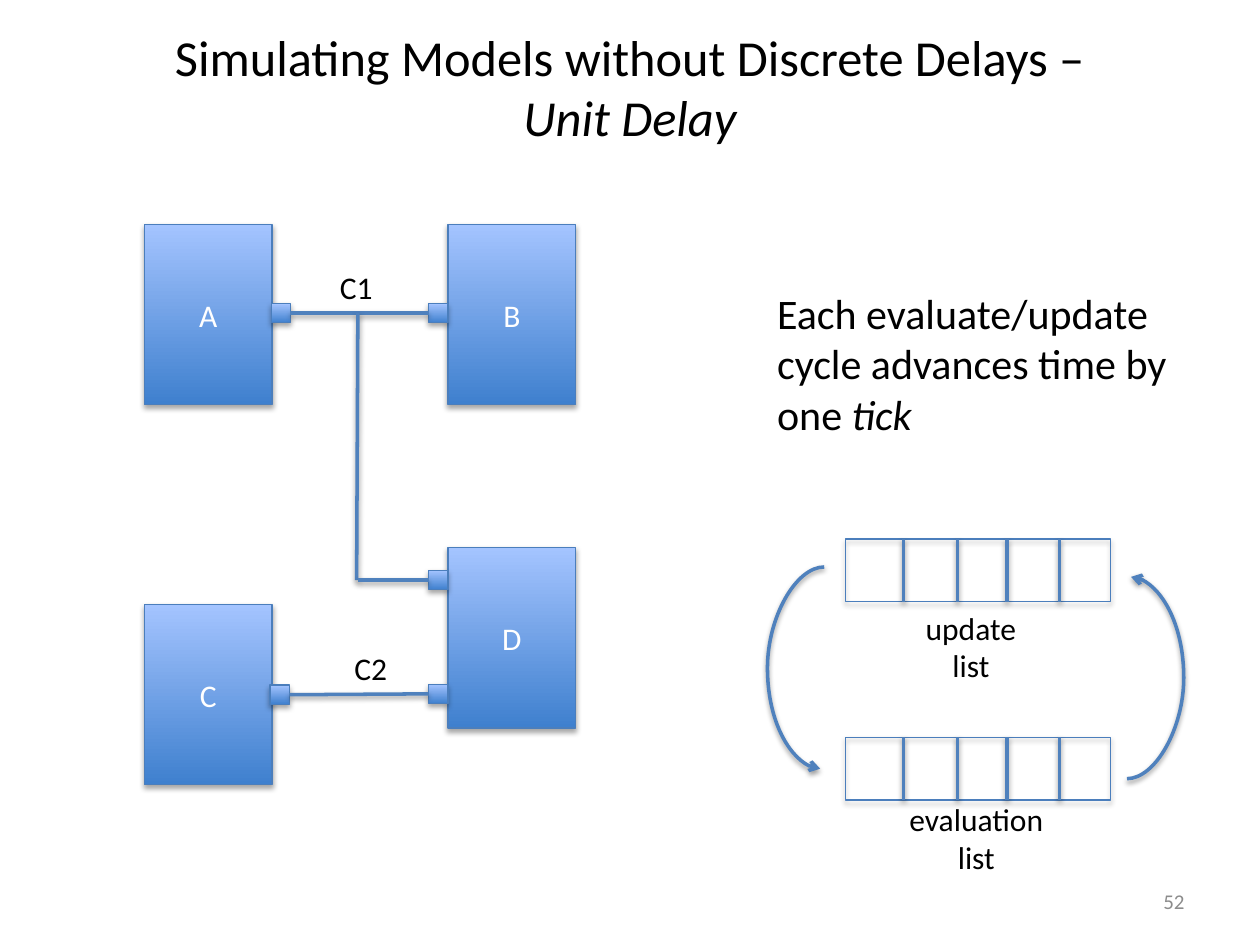
from dataclasses import dataclass

from lxml import etree
from pptx import Presentation
from pptx.dml.color import RGBColor as Rgb
from pptx.enum.shapes import MSO_CONNECTOR as Link, MSO_SHAPE as Kind
from pptx.enum.text import MSO_ANCHOR as Anchor, PP_ALIGN as Align
from pptx.oxml.ns import qn
from pptx.util import Pt


@dataclass(frozen=True)
class Theme:
    font: str = "Calibri"
    ink: str = "000000"
    pale: str = "FFFFFF"
    gray: str = "8C8C8C"
    edge: str = "4B7EBC"
    wire: str = "4F81BD"
    low: str = "3F80CE"
    high: str = "A4C4FF"
    title: float = 28.8
    body: float = 24
    label: float = 18
    small: float = 12


class Deck:
    def __init__(self, theme):
        self.theme = theme
        self.file = Presentation()
        self.file.slide_width, self.file.slide_height = Pt(720), Pt(540)
        self.slide = self.file.slides.add_slide(self.file.slide_layouts[6])
        self.shapes = self.slide.shapes

    def shade(self, item, alpha, dist):
        props = item.element.spPr
        glow = props.find(qn("a:effectLst"))
        if glow is None:
            glow = etree.SubElement(props, qn("a:effectLst"))
        drop = etree.SubElement(
            glow, qn("a:outerShdw"), blurRad=str(Pt(3.1)), dist=str(Pt(dist)),
            dir="5400000", rotWithShape="0")
        tint = etree.SubElement(drop, qn("a:srgbClr"), val="000000")
        etree.SubElement(tint, qn("a:alpha"), val=str(alpha * 1000))

    def style(self, frame, size, color, align, slant=()):
        """Format every run; slant holds the texts set in italics."""
        for para in frame.paragraphs:
            para.alignment = align
            for run in para.runs:
                font = run.font
                font.name, font.size = self.theme.font, Pt(size)
                font.color.rgb = Rgb.from_string(color)
                if run.text in slant:
                    font.italic = True

    def rect(self, x, y, w, h, text="", solid=True, host=None):
        look = self.theme
        item = (host or self.shapes).add_shape(
            Kind.RECTANGLE, Pt(x), Pt(y), Pt(w), Pt(h))
        if solid:
            item.fill.gradient()
            item.fill.gradient_angle = 90
            for stop, color in zip(item.fill.gradient_stops, (look.low, look.high)):
                stop.color.rgb = Rgb.from_string(color)
        else:
            item.fill.background()
        item.line.color.rgb = Rgb.from_string(look.edge)
        item.line.width = Pt(0.75)
        item.shadow.inherit = False
        self.shade(item, 35, 1.8)
        if text:
            frame = item.text_frame
            frame.text = text
            frame.vertical_anchor = Anchor.MIDDLE
            self.style(frame, look.label, look.pale, Align.CENTER)
        return item

    def line(self, start, end, host=None, kind=Link.STRAIGHT):
        """Each end is a point, or a shape with its connection site."""
        ends = [(0, 0) if hasattr(e[0], "shape_id") else e for e in (start, end)]
        item = (host or self.shapes).add_connector(
            kind, *(Pt(v) for point in ends for v in point))
        if hasattr(start[0], "shape_id"):
            item.begin_connect(*start)
        if hasattr(end[0], "shape_id"):
            item.end_connect(*end)
        item.line.color.rgb = Rgb.from_string(self.theme.wire)
        item.line.width = Pt(2)
        self.shade(item, 38, 1.6)
        return item

    def curve(self, start, end, bulge):
        item = self.line(start, end, kind=Link.CURVE)
        props = item.element.spPr
        shape = props.find(qn("a:prstGeom"))
        rules = shape.find(qn("a:avLst"))
        if rules is None:
            rules = etree.SubElement(shape, qn("a:avLst"))
        ratio = round(bulge / abs(end[0] - start[0]) * 100000)
        etree.SubElement(rules, qn("a:gd"), name="adj1", fmla=f"val {ratio}")
        etree.SubElement(props.find(qn("a:ln")), qn("a:tailEnd"), type="arrow")

    def text(self, x, y, w, h, words, size, color=None, align=Align.LEFT,
             slant=(), wrap=False, anchor=Anchor.TOP):
        frame = self.shapes.add_textbox(Pt(x), Pt(y), Pt(w), Pt(h)).text_frame
        frame.text = words
        frame.word_wrap = wrap
        frame.vertical_anchor = anchor
        self.style(frame, size, color or self.theme.ink, align, slant)
        return frame

    def queue(self, x, y, w, h, cuts):
        host = self.shapes.add_group_shape().shapes
        self.rect(x, y, w, h, solid=False, host=host)
        for cut in cuts:
            self.line((cut, y), (cut, y + h), host)


def main():
    look = Theme()
    deck = Deck(look)

    # Title
    deck.text(36, 35.3, 648, 28,
              "Simulating Models without Discrete Delays –\vUnit Delay",
              look.title, align=Align.CENTER, slant=("Unit Delay",),
              wrap=True, anchor=Anchor.MIDDLE)

    # Modules
    left, right = 82.5, 256
    for name, x, y in (("A", left, 128.2), ("C", left, 345.4),
                       ("B", right, 128.2), ("D", right, 313)):
        deck.rect(x, y, 73, 103, name)

    # Ports
    side = 11
    out_a, in_b, out_c, in_d, low_d = (
        deck.rect(x, y, side, side) for x, y in (
            (155, 173.5), (245, 173.5), (154.3, 391.5), (245, 326), (245, 391)))

    # Channels
    deck.line((out_a, 3), (in_b, 1))
    deck.line((204.5, 179), (203.8, 331.5))
    deck.line((204.5, 331.5), (in_d, 1))
    deck.line((out_c, 3), (low_d, 1))
    deck.text(187.2, 149.8, 33, 29, "C1", look.label)
    deck.text(195.4, 367.2, 33, 29, "C2", look.label)

    # Lists
    cuts = (516.2, 547.2, 575.4, 605.5)
    for y in (308, 421.3):
        deck.queue(483.3, y, 151.2, 35.8, cuts)
    deck.text(521.3, 344.2, 67, 51, "update\nlist", look.label, align=Align.CENTER)
    deck.text(511.9, 453.6, 92, 51, "evaluation\nlist", look.label,
              align=Align.CENTER)

    # Cycle arrows
    deck.curve((471, 324), (468.7, 439.3), 32.5)
    deck.curve((644, 445), (646.3, 329.7), 32.5)

    # Explanation
    note = deck.text(437, 160.6, 240.5, 94,
                     "Each evaluate/update\ncycle advances time by\none ",
                     look.body)
    tick = note.paragraphs[-1].add_run()
    tick.text = "tick"
    deck.style(note, look.body, look.ink, Align.LEFT, ("tick",))

    # Page number
    deck.text(516, 500.5, 168, 28.8, "52", look.small, look.gray,
              Align.RIGHT, wrap=True, anchor=Anchor.MIDDLE)

    deck.file.save("out.pptx")


if __name__ == "__main__":
    main()
